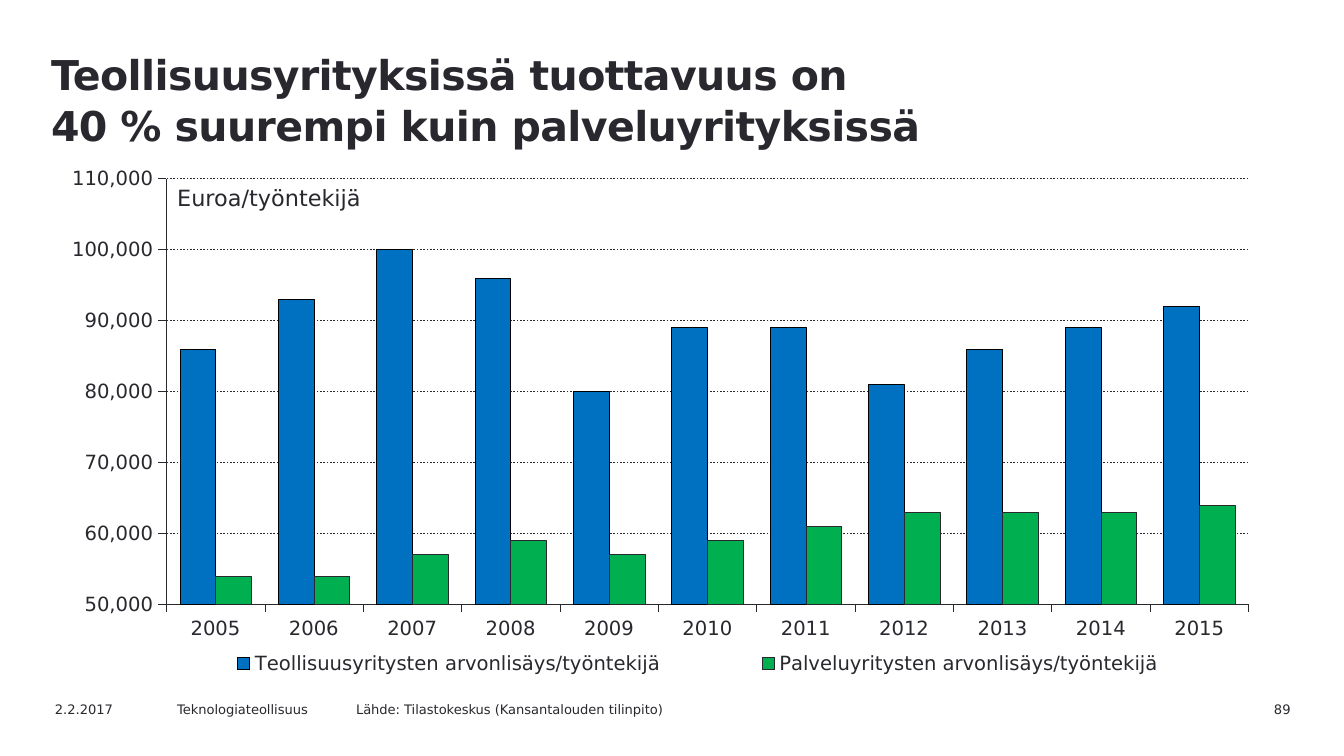
from pptx import Presentation
from pptx import util as u
from pptx.chart.data import CategoryChartData
from pptx.dml.color import RGBColor
from pptx.enum import chart as charts, dml, text
from pptx.oxml import parse_xml
from pptx.oxml.ns import nsdecls

FONT = "DejaVu Sans"
DARK = "29282E"


def color(value):
    return RGBColor.from_string(value)


def write(box, words, size=7, bold=False, align=text.PP_ALIGN.LEFT, wrap=True):
    frame = box.text_frame
    frame.word_wrap = wrap
    frame.auto_size = text.MSO_AUTO_SIZE.NONE
    frame.vertical_anchor = text.MSO_ANCHOR.TOP
    frame.text = words
    para = frame.paragraphs[0]
    para.alignment = align
    for span in para.runs:
        span.font.name = FONT
        span.font.size = u.Pt(size)
        span.font.bold = bold
        span.font.color.rgb = color(DARK)
    return para


deck = Presentation()
deck.slide_width, deck.slide_height = u.Cm(25.4), u.Cm(14.29)
page = deck.slides.add_slide(deck.slide_layouts[5])

# Title
title = page.shapes.title
title.left, title.top = u.Cm(0.71), u.Cm(0.79)
title.width, title.height = u.Cm(22.2), u.Cm(1.8)
heading = write(
    title,
    "Teollisuusyrityksissä tuottavuus on \v40 % suurempi kuin palveluyrityksissä",
    size=22, bold=True)
heading.line_spacing = u.Pt(27)
heading.space_before = u.Pt(0)
for span in heading.runs:
    span.font._element.set("spc", "-30")

# Footer
footer = [
    (22.25, 2.39, "89", text.PP_ALIGN.RIGHT),
    (0.79, 2.54, "2.2.2017", text.PP_ALIGN.LEFT),
    (3.1, 3.6, "Teknologiateollisuus", text.PP_ALIGN.LEFT),
    (6.48, 8.25, "Lähde: Tilastokeskus (Kansantalouden tilinpito)", text.PP_ALIGN.LEFT),
]
for left, width, words, align in footer:
    box = page.shapes.add_textbox(u.Cm(left), u.Cm(13.13), u.Cm(width), u.Cm(0.46))
    write(box, words, align=align)

# Chart of value added per employee
data = CategoryChartData(number_format="#,##0")
data.categories = [str(year) for year in range(2005, 2016)]
data.add_series("Teollisuusyritysten arvonlisäys/työntekijä", [
    86000, 93000, 100000, 96000, 80000, 89000, 89000, 81000, 86000, 89000, 92000])
data.add_series("Palveluyritysten arvonlisäys/työntekijä", [
    54000, 54000, 57000, 59000, 57000, 59000, 61000, 63000, 63000, 63000, 64000])
chart = page.shapes.add_chart(
    charts.XL_CHART_TYPE.COLUMN_CLUSTERED,
    u.Cm(1.07), u.Cm(3.07), u.Cm(23.32), u.Cm(9.83), data).chart
chart.has_title = False
chart.font.name = FONT
chart.font.size = u.Pt(10.5)
chart.font.bold = False
chart.font.color.rgb = color(DARK)

plot = chart.plots[0]
plot.gap_width = 75
plot.vary_by_categories = False
for series, fill, outline in zip(plot.series, ["0070C0", "00B050"], ["000000", DARK]):
    series.format.fill.solid()
    series.format.fill.fore_color.rgb = color(fill)
    series.format.line.color.rgb = color(outline)
    series.format.line.width = u.Pt(0.25)

values = chart.value_axis
values.minimum_scale, values.maximum_scale, values.major_unit = 50000, 110000, 10000
values.tick_labels.number_format = "#,##0"
values.tick_labels.number_format_is_linked = False
values.has_major_gridlines = True
values.major_gridlines.format.line.dash_style = dml.MSO_LINE.DASH
for axis in (chart.category_axis, values):
    axis.major_tick_mark = charts.XL_TICK_MARK.OUTSIDE
for part in (chart.category_axis, values, values.major_gridlines):
    part.format.line.color.rgb = color(DARK)
    part.format.line.width = u.Pt(0.25)

chart.has_legend = True
legend = chart.legend
legend.position = charts.XL_LEGEND_POSITION.BOTTOM
legend.include_in_layout = False

# Fixed places for the plot and the legend, as fractions of the chart
plot_area = chart._chartSpace.chart.plotArea
for old in plot_area.findall("{*}layout"):
    plot_area.remove(old)
for old in legend._element.findall("{*}layout"):
    legend._element.remove(old)
for parent, index, target, place in [
    (plot_area, 0, '<c:layoutTarget val="inner"/>', (0.089, 0.031, 0.877, 0.819)),
    (legend._element, 1, "", (0.07, 0.94, 0.9, 0.06)),
]:
    modes = '<c:xMode val="edge"/><c:yMode val="edge"/>'
    sizes = "".join(f'<c:{key} val="{value}"/>' for key, value in zip("xywh", place))
    parent.insert(index, parse_xml(
        f'<c:layout {nsdecls("c")}><c:manualLayout>{target}{modes}{sizes}'
        "</c:manualLayout></c:layout>"))

# Unit of the value axis
unit = page.shapes.add_textbox(u.Cm(3.1), u.Cm(3.35), u.Cm(4.09), u.Cm(0.76))
write(unit, "Euroa/työntekijä", size=12, wrap=False)

deck.save("out.pptx")
